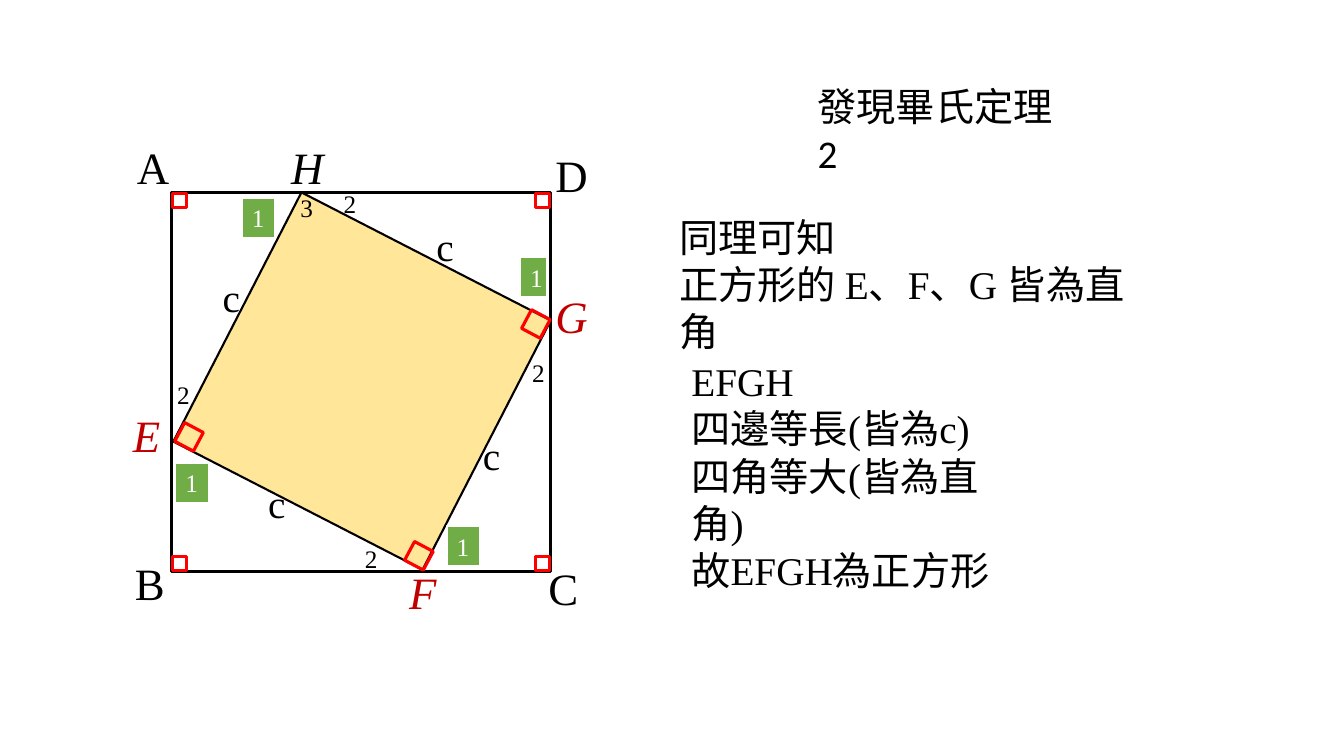
from pptx import Presentation
from pptx.dml.color import RGBColor
from pptx.enum.shapes import MSO_SHAPE
from pptx.enum.text import MSO_ANCHOR, MSO_AUTO_SIZE, PP_ALIGN
from pptx.util import Pt

PX = 9144
COLORS = {
    "black": "000000",
    "white": "FFFFFF",
    "mark": "FF0000",
    "vertex": "C00000",
    "inner": "FFE699",
    "tag": "70AD47",
}
SERIF = "Times New Roman"
OUTER_LEFT, OUTER_TOP, OUTER_SIDE = 170, 191, 376
CORNER_SIDE = 14


def color(name):
    return RGBColor.from_string(COLORS[name])


def place(box, left, top, width, height):
    box.left, box.top = left * PX, top * PX
    box.width, box.height = width * PX, height * PX


def write(box, lines, size, ink="black", font=SERIF, italic=False):
    frame = box.text_frame
    frame.text = "\n".join(lines)
    frame.word_wrap = True
    frame.auto_size = MSO_AUTO_SIZE.NONE
    frame.vertical_anchor = MSO_ANCHOR.TOP
    for para in frame.paragraphs:
        para.alignment = PP_ALIGN.LEFT
        para.line_spacing = 1.0
        para.font.name = font
        para.font.size = Pt(size)
        para.font.italic = italic
        para.font.color.rgb = color(ink)


def add_text(page, lines, area, size, ink="black", italic=False):
    box = page.shapes.add_textbox(0, 0, PX, PX)
    place(box, *area)
    write(box, lines, size, ink, italic=italic)


def add_rectangle(page, area, line, weight, fill=None, rotation=0):
    box = page.shapes.add_shape(MSO_SHAPE.RECTANGLE, 0, 0, PX, PX)
    place(box, *area)
    box.rotation = rotation
    box.shadow.inherit = False
    box.line.color.rgb = color(line)
    box.line.width = Pt(weight)
    if fill:
        box.fill.solid()
        box.fill.fore_color.rgb = color(fill)
    else:
        box.fill.background()
    return box


def add_squares(page):
    add_rectangle(page, (OUTER_LEFT, OUTER_TOP, OUTER_SIDE, OUTER_SIDE), "black", 2.25)
    add_rectangle(page, (220, 239, 278, 278), "black", 1.5, "inner", 117.2)
    reach = OUTER_SIDE - CORNER_SIDE - 1
    for across in (1, reach):
        for down in (1, reach):
            area = (OUTER_LEFT + across, OUTER_TOP + down, CORNER_SIDE, CORNER_SIDE)
            add_rectangle(page, area, "mark", 2.25)
    for left, top in ((177, 423), (405, 541), (521, 311)):
        add_rectangle(page, (left, top, 21, 21), "mark", 2.25, rotation=28)


def add_labels(page):
    for name, left, top in (("A", 126, 134), ("B", 124, 546), ("C", 534, 551), ("D", 541, 142)):
        add_text(page, [name], (left, top, 53, 64), 32)
    for name, left, top, ink in (
        ("E", 122, 400, "vertex"),
        ("F", 396, 555, "vertex"),
        ("G", 541, 282, "vertex"),
        ("H", 279, 134, "black"),
    ):
        add_text(page, [name], (left, top, 48, 64), 32, ink, True)
    for left, top in ((211, 266), (256, 471), (469, 423), (423, 216)):
        add_text(page, ["c"], (left, top, 38, 57), 28)


def add_angles(page):
    for name, left, top in (
        ("2", 331, 182),
        ("3", 288, 186),
        ("2", 166, 371),
        ("2", 352, 534),
        ("2", 518, 350),
    ):
        add_text(page, [name], (left, top, 33, 40), 18)
    for left, top, width in ((240, 196, 33), (174, 459, 33), (443, 522, 33), (516, 255, 27)):
        box = add_rectangle(page, (left, top, width, 40), "white", 1.5, "tag")
        write(box, ["1"], 18, "white")


def main():
    deck = Presentation()
    deck.slide_width, deck.slide_height = 1333 * PX, 750 * PX
    page = deck.slides.add_slide(deck.slide_layouts[5])
    title = page.shapes.title
    place(title, 801, 77, 254, 105)
    write(title, ["發現畢氏定理2"], 28, font="Calibri")
    add_squares(page)
    add_labels(page)
    add_angles(page)
    add_text(page, ["同理可知", "正方形的 E、F、G 皆為直角"], (664, 207, 495, 152), 28)
    proof = ["EFGH", "四邊等長(皆為c)", "四角等大(皆為直角)", "故EFGH為正方形"]
    add_text(page, proof, (676, 350, 340, 246), 28)
    deck.save("out.pptx")


if __name__ == "__main__":
    main()
